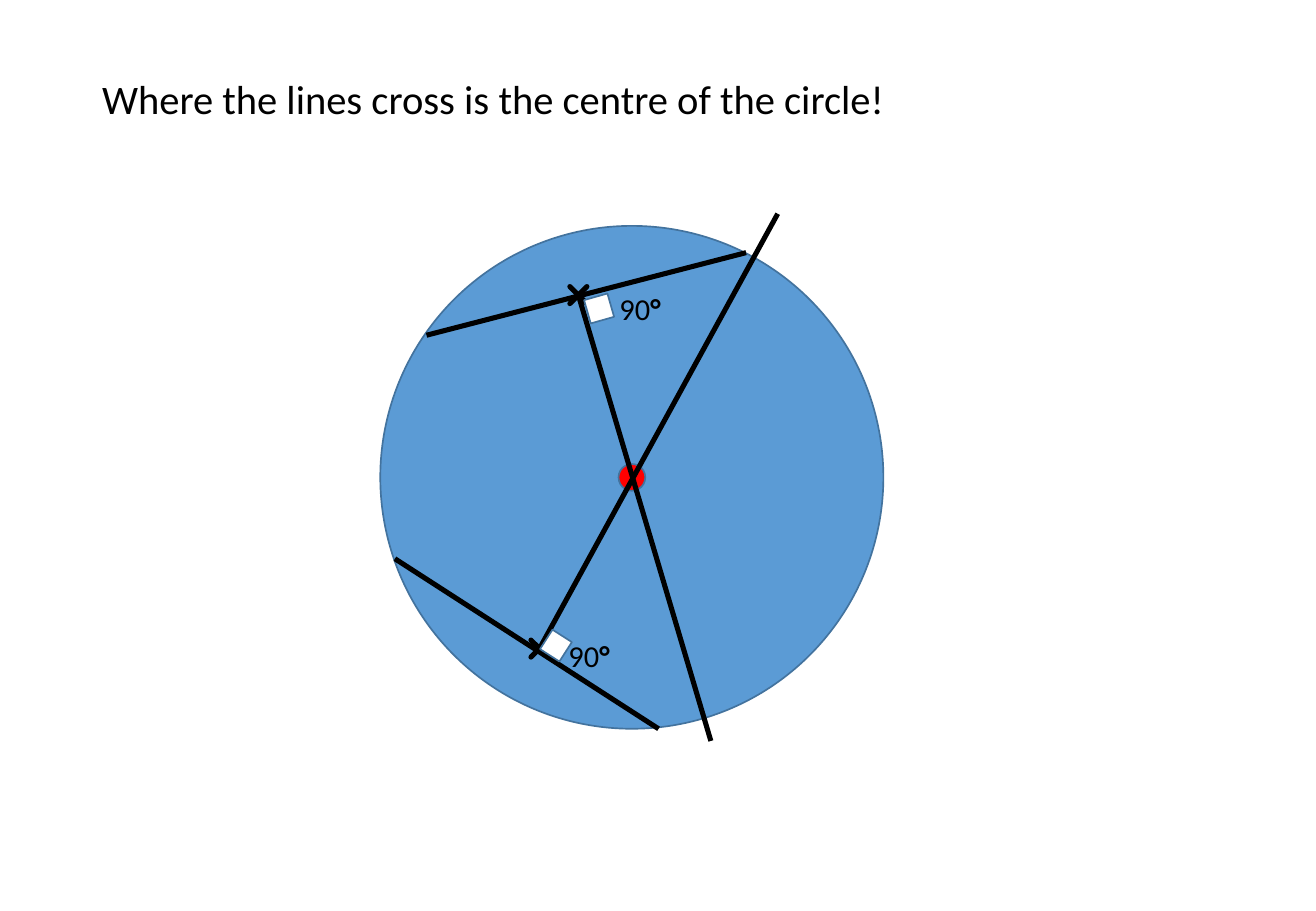
from dataclasses import dataclass

from pptx import Presentation
from pptx.dml.color import RGBColor
from pptx.enum.shapes import MSO_CONNECTOR as Connector, MSO_SHAPE as Preset
from pptx.enum.text import MSO_ANCHOR as Anchor, MSO_AUTO_SIZE as AutoSize, PP_ALIGN as Align
from pptx.oxml.ns import qn
from pptx.util import Inches, Pt

# Places are columns and rows of a grid with square cells.
COLUMNS, ROWS = 1083, 750
CELL = Inches(0.01)

TITLE = "Where the lines cross is the centre of the circle!"
TITLE_BOX = (74, 34, 934, 99)
RIGHT_ANGLE = [("90", False), ("°", True)]

CENTRE = (520, 393)
CIRCLE_SIZE, DOT_SIZE, CROSS_SIZE = 414, 22, 27
LABEL_SIZE = (56, 40)

# Each perpendicular starts at its foot on the chord and runs through the centre.
CONSTRUCTIONS = [
    {"chord": ((351, 276), (614, 208)), "perpendicular": ((476, 243), (585, 610)),
     "corner": (493, 254), "corner_size": 20, "turn": 74.1, "label": (528, 254)},
    {"chord": ((325, 460), (542, 600)), "perpendicular": ((444, 534), (640, 176)),
     "corner": (457.5, 531.5), "corner_size": 19, "turn": 32.7, "label": (486, 540)},
]


@dataclass(frozen=True)
class Theme:
    font: str = "Calibri"
    title_size: int = 24
    label_size: int = 18
    ink: str = "000000"
    disc: str = "5B9BD5"
    outline: str = "43739E"
    centre: str = "FF0000"
    corner: str = "FFFFFF"
    thin: float = 1
    thick: float = 3


THEME = Theme()


def cells(*counts):
    return [round(count * CELL) for count in counts]


def box_around(middle, width, height):
    x, y = middle
    return cells(x - width / 2, y - height / 2, width, height)


def set_line(line, color, width):
    line.color.rgb = RGBColor.from_string(color)
    line.width = Pt(width)


def write(frame, runs, *, size, align=Align.LEFT, anchor=Anchor.TOP, wrap=True, spacing=1.0):
    frame.word_wrap = wrap
    frame.vertical_anchor = anchor
    paragraph = frame.paragraphs[0]
    paragraph.alignment = align
    paragraph.line_spacing = spacing
    for words, bold in runs:
        run = paragraph.add_run()
        run.text = words
        run.font.name = THEME.font
        run.font.size = Pt(size)
        run.font.bold = bold
        run.font.color.rgb = RGBColor.from_string(THEME.ink)


def add_figure(slide, preset, middle, size, fill, *, line=THEME.outline, width=THEME.thin, turn=0):
    figure = slide.shapes.add_shape(preset, *box_around(middle, size, size))
    figure.shadow.inherit = False
    figure.fill.solid()
    figure.fill.fore_color.rgb = RGBColor.from_string(fill)
    set_line(figure.line, line, width)
    figure.rotation = turn
    return figure


def add_stroke(slide, start, end):
    stroke = slide.shapes.add_connector(Connector.STRAIGHT, *cells(*start, *end))
    set_line(stroke.line, THEME.ink, THEME.thick)
    properties = stroke._element.spPr
    properties.append(properties.makeelement(qn("a:effectLst"), {}))


def add_cross(slide, middle):
    cross = add_figure(slide, Preset.MATH_MULTIPLY, middle, CROSS_SIZE, THEME.disc,
                       line=THEME.ink, width=THEME.thick)
    cross.adjustments[0] = 0


def add_label(slide, middle):
    label = slide.shapes.add_textbox(*box_around(middle, *LABEL_SIZE)).text_frame
    write(label, RIGHT_ANGLE, size=THEME.label_size, wrap=False)
    label.auto_size = AutoSize.SHAPE_TO_FIT_TEXT


def main():
    deck = Presentation()
    deck.slide_width, deck.slide_height = cells(COLUMNS, ROWS)
    slide = deck.slides.add_slide(deck.slide_layouts[5])

    title = slide.shapes.title
    title.left, title.top, title.width, title.height = cells(*TITLE_BOX)
    write(title.text_frame, [(TITLE, False)], size=THEME.title_size,
          anchor=Anchor.MIDDLE, spacing=0.9)

    add_figure(slide, Preset.OVAL, CENTRE, CIRCLE_SIZE, THEME.disc)
    add_figure(slide, Preset.OVAL, CENTRE, DOT_SIZE, THEME.centre)
    for part in CONSTRUCTIONS:
        foot, end = part["perpendicular"]
        add_stroke(slide, *part["chord"])
        add_cross(slide, foot)
        add_stroke(slide, foot, end)
        add_figure(slide, Preset.RECTANGLE, part["corner"], part["corner_size"],
                   THEME.corner, turn=part["turn"])
        add_label(slide, part["label"])

    deck.save("out.pptx")


if __name__ == "__main__":
    main()
